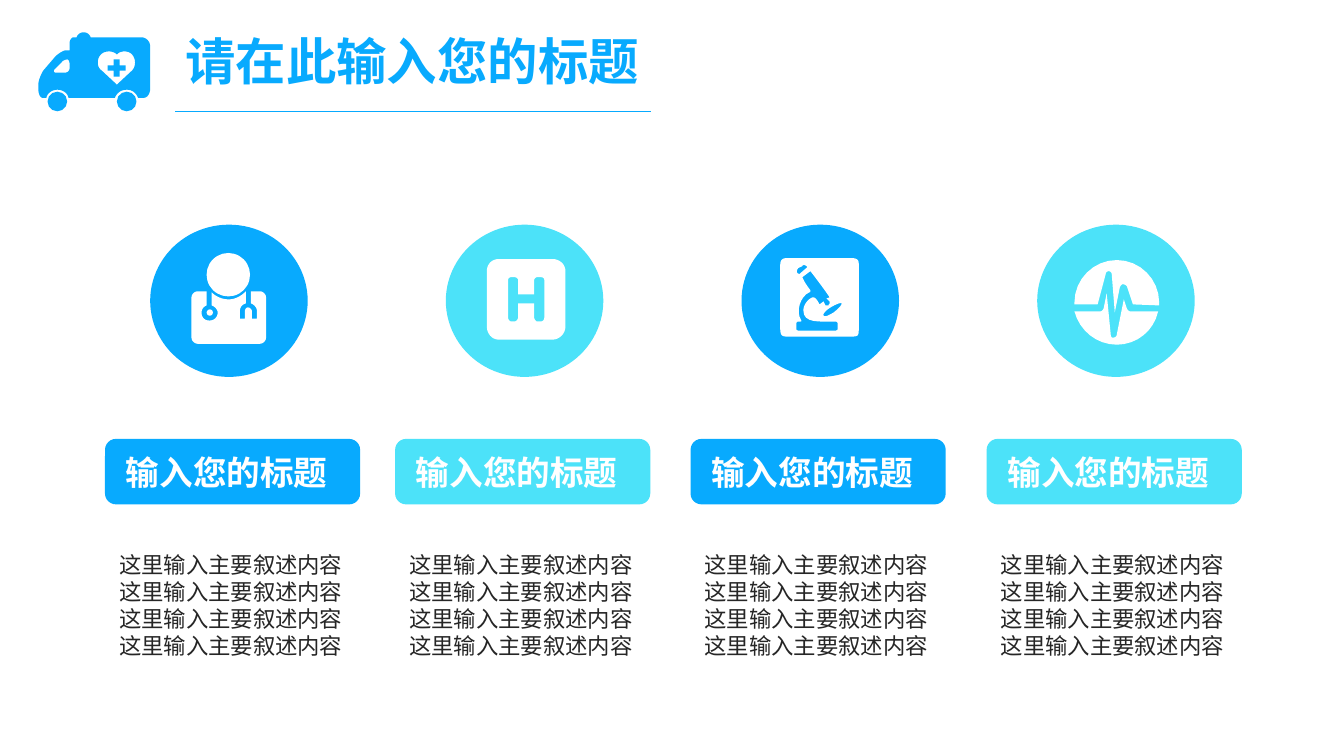
from pptx import Presentation
from pptx.dml.color import RGBColor
from pptx.enum.shapes import MSO_CONNECTOR as Connector, MSO_SHAPE as Preset
from pptx.enum.text import MSO_ANCHOR as Anchor, MSO_AUTO_SIZE as AutoSize, PP_ALIGN as Align
from pptx.oxml.ns import qn
from pptx.util import Pt

COLORS = {"blue": "08AAFE", "cyan": "4CE2F9", "white": "FFFFFF", "ink": "262626"}
FONT = "Noto Sans CJK SC"
UNIT = 0.72

deck = Presentation()
deck.slide_width, deck.slide_height = Pt(960), Pt(540)
page = deck.slides.add_slide(deck.slide_layouts[6])


def paint(shape, color):
    shape.shadow.inherit = False
    shape.fill.solid()
    shape.fill.fore_color.rgb = RGBColor.from_string(COLORS[color])
    shape.line.fill.background()
    return shape


def write(frame, text, size, color, bold=False):
    for index, words in enumerate(text.split("\n")):
        para = frame.paragraphs[0] if index == 0 else frame.add_paragraph()
        para.alignment = Align.LEFT
        span = para.add_run()
        span.text = words
        span.font.size = Pt(size)
        span.font.bold = bold
        span.font.name = FONT
        span.font.color.rgb = RGBColor.from_string(COLORS[color])
        east_asian = span.font._element.makeelement(qn("a:ea"), {"typeface": FONT})
        span.font._element.find(qn("a:latin")).addnext(east_asian)


doctor_body = [[
    (196, 341), (258, 341), (261, 341, 264, 338, 264, 335), (264, 295),
    (264, 292, 261, 289, 258, 289), (249, 289), (249, 301),
    (252, 302, 255, 305, 255, 309), (255, 316), (250, 316), (250, 309),
    (250, 307, 248, 305, 246, 305), (244, 305, 243, 307, 243, 309),
    (243, 316), (238, 316), (238, 309), (238, 305, 240, 302, 244, 301),
    (244, 289), (239, 294, 233, 297, 227, 297), (220, 297, 214, 294, 210, 290),
    (210, 303), (213, 304, 216, 307, 216, 310), (216, 315, 212, 318, 208, 318),
    (203, 318, 200, 315, 200, 310), (200, 307, 202, 304, 205, 303), (205, 289),
    (196, 289), (193, 289, 190, 292, 190, 295), (190, 335),
    (190, 338, 193, 341, 196, 341),
]]
hospital_sign = [[
    (495, 257), (488, 257, 483, 262, 483, 269), (483, 324),
    (483, 331, 488, 337, 495, 337), (548, 337), (555, 337, 561, 331, 561, 324),
    (561, 269), (561, 262, 555, 257, 548, 257),
], [
    (540, 315), (540, 317, 539, 319, 536, 319), (533, 319),
    (532, 319, 530, 317, 530, 315), (530, 301), (514, 301), (514, 315),
    (514, 317, 512, 319, 510, 319), (507, 319), (506, 319, 504, 317, 504, 315),
    (504, 278), (504, 276, 506, 275, 507, 275), (510, 275),
    (512, 275, 514, 276, 514, 278), (514, 292), (530, 292), (530, 278),
    (530, 276, 532, 275, 533, 275), (536, 275), (539, 275, 540, 276, 540, 278),
]]
microscope = [[
    (852, 325), (852, 263), (852, 259, 852, 256, 844, 256), (783, 256),
    (778, 256, 774, 256, 774, 263), (774, 324), (774, 333, 775, 334, 782, 334),
    (844, 334), (852, 334, 852, 333, 852, 325),
], [
    (792, 266), (796, 264), (796, 263, 797, 263, 798, 263),
    (799, 263, 800, 264, 800, 264), (801, 265), (793, 272), (791, 271),
    (790, 269, 791, 267, 792, 266),
], [
    (831, 327), (831, 327, 830, 328, 829, 328), (792, 328),
    (791, 328, 790, 327, 790, 327), (790, 321), (790, 320, 791, 319, 792, 319),
    (794, 319), (795, 319, 795, 319, 795, 318), (789, 309, 794, 294, 803, 290),
    (804, 290, 804, 289, 804, 288), (801, 284, 798, 280, 796, 275), (804, 269),
    (811, 278, 822, 293, 823, 295), (820, 296), (823, 299),
    (823, 300, 823, 300, 823, 301), (823, 301, 823, 302, 822, 302), (822, 303),
    (821, 303, 820, 303, 819, 303), (817, 299), (813, 302),
    (812, 300, 811, 298, 809, 296), (808, 295, 807, 295, 806, 295),
    (801, 297, 797, 303, 797, 308), (797, 321, 813, 319, 829, 319),
    (830, 319, 831, 320, 831, 321),
], [
    (827, 310), (822, 313, 818, 315, 817, 313), (816, 312, 819, 308, 824, 305),
    (829, 302, 834, 300, 835, 301), (835, 303, 832, 306, 827, 310),
]]
pulse_top = [[
    (1108, 258), (1085, 258, 1066, 277, 1066, 300), (1066, 302), (1089, 302),
    (1097, 272), (1097, 270, 1099, 269, 1100, 269),
    (1101, 269, 1103, 270, 1103, 272), (1106, 310), (1111, 285),
    (1112, 283, 1113, 282, 1114, 282), (1116, 282, 1117, 283, 1118, 284),
    (1124, 302), (1150, 303), (1150, 300), (1150, 277, 1131, 258, 1108, 258),
]]
pulse_bottom = [[
    (1118, 306), (1115, 297), (1108, 332), (1108, 334, 1106, 335, 1104, 335),
    (1103, 335, 1102, 334, 1102, 332), (1098, 291), (1095, 306),
    (1094, 308, 1093, 309, 1091, 309), (1066, 309),
    (1071, 328, 1088, 342, 1108, 342), (1128, 342, 1145, 328, 1149, 309),
    (1122, 309), (1120, 309, 1119, 308, 1118, 306),
]]
ambulance = [[
    (140, 37), (90, 37), (89, 34, 86, 32, 83, 32), (80, 32, 77, 34, 76, 37),
    (73, 37), (71, 37, 69, 40, 69, 43), (69, 50), (65, 50),
    (63, 50, 58, 53, 55, 56), (43, 70), (41, 73, 38, 80, 38, 84), (38, 88),
    (38, 93, 40, 97, 42, 97), (46, 97), (47, 92, 52, 89, 57, 89),
    (62, 89, 67, 92, 68, 97), (114, 97), (116, 92, 120, 89, 126, 89),
    (131, 89, 135, 92, 137, 97), (143, 97), (146, 97, 149, 93, 149, 88),
    (149, 46), (149, 41, 145, 37, 140, 37),
], [
    (69, 68), (69, 70, 67, 72, 65, 72), (55, 72), (53, 72, 53, 70, 54, 69),
    (61, 62), (62, 60, 65, 59, 67, 59), (68, 59, 69, 61, 69, 63),
], [
    (131, 70), (116, 84), (101, 70), (98, 68, 97, 65, 97, 62),
    (97, 56, 101, 51, 108, 51), (111, 51, 114, 52, 116, 54),
    (118, 52, 120, 51, 124, 51), (130, 51, 134, 56, 134, 62),
    (134, 65, 133, 68, 131, 70),
]]

title = page.shapes.add_textbox(Pt(125.25), Pt(18), Pt(342.75), Pt(51))
title.text_frame.word_wrap = False
title.text_frame.auto_size = AutoSize.SHAPE_TO_FIT_TEXT
write(title.text_frame, "请在此输入您的标题", size=36, color="blue", bold=True)

rule = page.shapes.add_connector(Connector.STRAIGHT, Pt(125.25), Pt(79.5), Pt(465), Pt(79.5))
rule.line.color.rgb = RGBColor.from_string(COLORS["blue"])
rule.line.width = Pt(0.5)
properties = rule._element.spPr
properties.append(properties.makeelement(qn("a:effectLst"), {}))

for column, left in enumerate((75, 282.25, 493.25, 704.75)):
    color = ("blue", "cyan")[column % 2]
    paint(page.shapes.add_shape(
        Preset.OVAL, Pt(107.25 + 211.2 * column), Pt(160.5), Pt(112.5), Pt(108.75)), color)

    button = paint(page.shapes.add_shape(
        Preset.ROUNDED_RECTANGLE, Pt(left), Pt(313.5), Pt(182.25), Pt(46.75)), color)
    button.text_frame.vertical_anchor = Anchor.MIDDLE
    button.text_frame.margin_left = Pt(12.6)
    write(button.text_frame, "输入您的标题", size=24, color="white", bold=True)

    box = page.shapes.add_textbox(Pt(left + 3), Pt(390.25), Pt(176.4), Pt(138.25))
    box.text_frame.word_wrap = False
    box.text_frame.auto_size = AutoSize.SHAPE_TO_FIT_TEXT
    write(box.text_frame, "\n".join(["这里输入主要叙述内容"] * 4), size=16, color="ink")

for icon, color in ((doctor_body, "white"), (hospital_sign, "white"), (microscope, "white"),
                    (pulse_top, "white"), (pulse_bottom, "white"), (ambulance, "blue")):
    builder = None
    for contour in icon:
        points = [contour[0]]
        for step in contour[1:]:
            if len(step) == 2:
                points.append(step)
                continue
            x0, y0 = points[-1]
            x1, y1, x2, y2, x3, y3 = step
            for t in (0.125 * part for part in range(1, 9)):
                a, b, c, d = (1 - t) ** 3, 3 * t * (1 - t) ** 2, 3 * t * t * (1 - t), t ** 3
                points.append((a * x0 + b * x1 + c * x2 + d * x3,
                               a * y0 + b * y1 + c * y2 + d * y3))
        points = [(Pt(UNIT * x), Pt(UNIT * y)) for x, y in points]
        if builder is None:
            builder = page.shapes.build_freeform(*points[0], scale=1.0)
        else:
            builder.move_to(*points[0])
        builder.add_line_segments(points[1:], close=True)
    paint(builder.convert_to_shape(), color)

for preset, left, top, width, height, color in (
        (Preset.OVAL, 147.6, 180.75, 31, 31, "white"),
        (Preset.OVAL, 147.6, 221, 4.5, 4.5, "white"),
        (Preset.OVAL, 34, 65.5, 14, 14, "blue"),
        (Preset.OVAL, 83.5, 65.5, 14, 14, "blue"),
        (Preset.CROSS, 77, 42.5, 12.75, 12.25, "blue")):
    part = paint(page.shapes.add_shape(preset, Pt(left), Pt(top), Pt(width), Pt(height)), color)
    if preset == Preset.CROSS:
        part.adjustments[0] = 0.35

deck.save("out.pptx")
